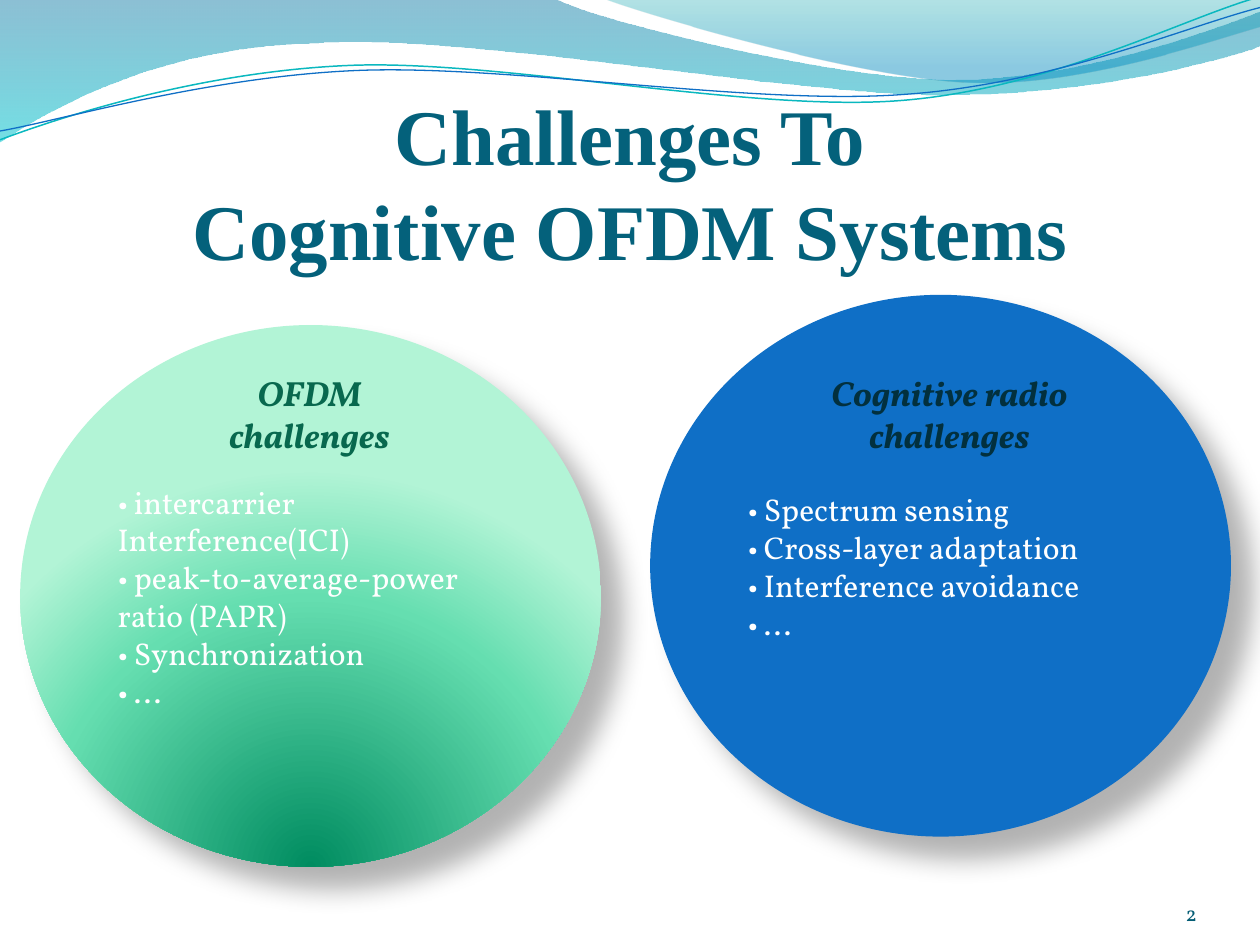
from lxml import etree
from pptx import Presentation
from pptx.dml.color import RGBColor
from pptx.enum.shapes import MSO_SHAPE
from pptx.enum.text import MSO_ANCHOR, MSO_AUTO_SIZE, PP_ALIGN
from pptx.oxml.ns import qn
from pptx.util import Inches, Pt

OVAL = MSO_SHAPE.OVAL
MIDDLE, BOTTOM = MSO_ANCHOR.MIDDLE, MSO_ANCHOR.BOTTOM
LEFT, CENTER, RIGHT = PP_ALIGN.LEFT, PP_ALIGN.CENTER, PP_ALIGN.RIGHT
JUSTIFY = PP_ALIGN.JUSTIFY
SERIF, BODY = "Times New Roman", "Vollkorn"

# A wave is a start point, then lines (x, y) and curves (six numbers).
BAND = [(0, 0), (4.4, -0.01), (4.76, 0.17, 6.64, 0.63, 7.58, 0.63),
        (8.53, 0.63, 9.58, 0.26, 10, 0.09), (10.01, 0.36),
        (9.83, 0.44, 8.7, 0.76, 7.46, 0.75),
        (6.22, 0.75, 3.82, 0.28, 2.57, 0.34),
        (1.29, 0.36, 0.46, 0.83, -0.01, 1.13), (0, 0)]
CREST = [(4.79, -0.01), (5.09, 0.11, 6.82, 0.62, 7.69, 0.65),
         (8.56, 0.69, 9.61, 0.32, 10, 0.21), (10, 0), (4.79, -0.01)]
TEAL = [(0, 1.11), (0.48, 0.93, 1.58, 0.57, 2.77, 0.52),
        (3.95, 0.47, 5.93, 0.89, 7.13, 0.8),
        (8.33, 0.71, 9.38, 0.15, 9.98, -0.02)]
BLUE = [(0, 1.04), (0.47, 0.96, 1.64, 0.61, 2.83, 0.56),
        (4.03, 0.51, 5.97, 0.84, 7.17, 0.75),
        (8.36, 0.67, 9.41, 0.21, 10, 0.06)]


def color(code):
    return RGBColor.from_string(code)


def node(parent, tag, **attrs):
    return etree.SubElement(parent, qn("a:" + tag),
                            {key: str(val) for key, val in attrs.items()})


def tint(parent, code, alpha):
    """Add a colour with its opacity in percent."""
    base = node(parent, "srgbClr", val=code)
    if alpha < 100:
        node(base, "alpha", val=alpha * 1000)


def blend(shape, stops, radial=False):
    """Fill with (position, colour, opacity) stops, downward or radial."""
    shape.fill.solid()
    solid = shape.element.spPr.find(qn("a:solidFill"))
    grad = etree.Element(qn("a:gradFill"), rotWithShape="1")
    items = node(grad, "gsLst")
    for pos, code, alpha in stops:
        tint(node(items, "gs", pos=pos * 1000), code, alpha)
    if radial:
        node(node(grad, "path", path="circle"), "fillToRect",
             l=50000, t=130000, r=50000, b=-30000)
    else:
        node(grad, "lin", ang=90 * 60000, scaled=0)
    solid.getparent().replace(solid, grad)


def shade(shape):
    shape.shadow.inherit = False
    effects = shape.element.spPr.find(qn("a:effectLst"))
    outer = node(effects, "outerShdw", blurRad=Pt(15), dist=Pt(18),
                 dir=45 * 60000, algn="tl", rotWithShape=0)
    tint(outer, "000000", 30)


def bend(shape, path):
    """Turn the straight segments that stand for curves into Béziers."""
    lines = list(shape.element.spPr.iter(qn("a:lnTo")))
    for line, part in zip(lines, path[1:]):
        if len(part) == 6:
            curve = etree.Element(qn("a:cubicBezTo"))
            for x, y in zip(part[::2], part[1::2]):
                node(curve, "pt", x=Inches(x) - shape.left,
                     y=Inches(y) - shape.top)
            line.getparent().replace(line, curve)


def wave(slide, path, stops=None, line=None, width=1):
    knots = [(Inches(part[-2]), Inches(part[-1])) for part in path]
    pen = slide.shapes.build_freeform(*knots[0])
    pen.add_line_segments(knots[1:], close=bool(stops))
    shape = pen.convert_to_shape()
    bend(shape, path)
    shape.shadow.inherit = False
    if stops:
        blend(shape, stops)
        shape.line.fill.background()
    else:
        shape.fill.background()
        shape.line.color.rgb = color(line)
        shape.line.width = Pt(width)
    slide.shapes.title.element.addprevious(shape.element)


def write(shape, text, size, code, align, anchor=MIDDLE, face=BODY,
          bold=False, italic=False):
    frame = shape.text_frame
    frame.word_wrap = True
    frame.auto_size = MSO_AUTO_SIZE.NONE
    frame.vertical_anchor = anchor
    frame.text = text
    for par in frame.paragraphs:
        par.alignment = align
        font = par.font
        font.name, font.size = face, Pt(size)
        font.bold, font.italic = bold, italic
        font.color.rgb = color(code)
    return frame


def place(shape, *box):
    shape.left, shape.top, shape.width, shape.height = map(Inches, box)


def label(slide, box, *args, **style):
    return write(slide.shapes.add_textbox(*map(Inches, box)), *args, **style)


def bubble(slide, left, top, text, align):
    shape = slide.shapes.add_shape(
        OVAL, *map(Inches, (left, top, 4.61, 4.3)))
    shape.line.fill.background()
    shade(shape)
    write(shape, text, 18, "FFFFFF", align)
    return shape


def main():
    deck = Presentation()
    deck.slide_width, deck.slide_height = Inches(10), Inches(7.5)
    slide = deck.slides.add_slide(deck.slide_layouts[5])

    wave(slide, BAND, [(0, "0074A1", 45), (100, "00C6CF", 55)])
    wave(slide, CREST, [(0, "00A1A9", 30), (80, "008BBF", 45)])
    wave(slide, TEAL, line="0AB8BF", width=0.85)
    wave(slide, BLUE, line="0F6FC6", width=0.75)

    title = slide.shapes.title
    place(title, 0.5, 0.94, 9, 1.25)
    frame = write(title, "Challenges To\vCognitive OFDM Systems", 45,
                  "04617B", CENTER, BOTTOM, SERIF, bold=True)
    frame.margin_left = frame.margin_right = frame.margin_bottom = 0

    ofdm = bubble(slide, 0.16, 2.58,
                  "• intercarrier\nInterference(ICI)\n"
                  "• peak-to-average-power\nratio (PAPR)\n"
                  "• Synchronization\n• ...", JUSTIFY)
    blend(ofdm, [(0, "008C60", 100), (68, "65DEB0", 100),
                 (100, "B2F4D6", 100)], radial=True)
    radio = bubble(slide, 5.16, 2.34,
                   "• Spectrum sensing\n• Cross-layer adaptation\n"
                   "• Interference avoidance\n• ...", LEFT)
    radio.fill.solid()
    radio.fill.fore_color.rgb = color("0F6FC6")

    label(slide, (1.48, 2.81, 1.95, 0.94), "OFDM\nchallenges", 20,
          "08684E", CENTER, bold=True, italic=True)
    label(slide, (6.17, 2.81, 2.73, 0.94), "Cognitive radio challenges", 20,
          "02303E", CENTER, bold=True, italic=True)
    page = label(slide, (8.67, 6.95, 0.83, 0.4), "2", 12, "045D75",
                 RIGHT, BOTTOM)
    page.margin_left = page.margin_right = 0
    page.margin_top = page.margin_bottom = 0

    deck.save("out.pptx")


if __name__ == "__main__":
    main()
